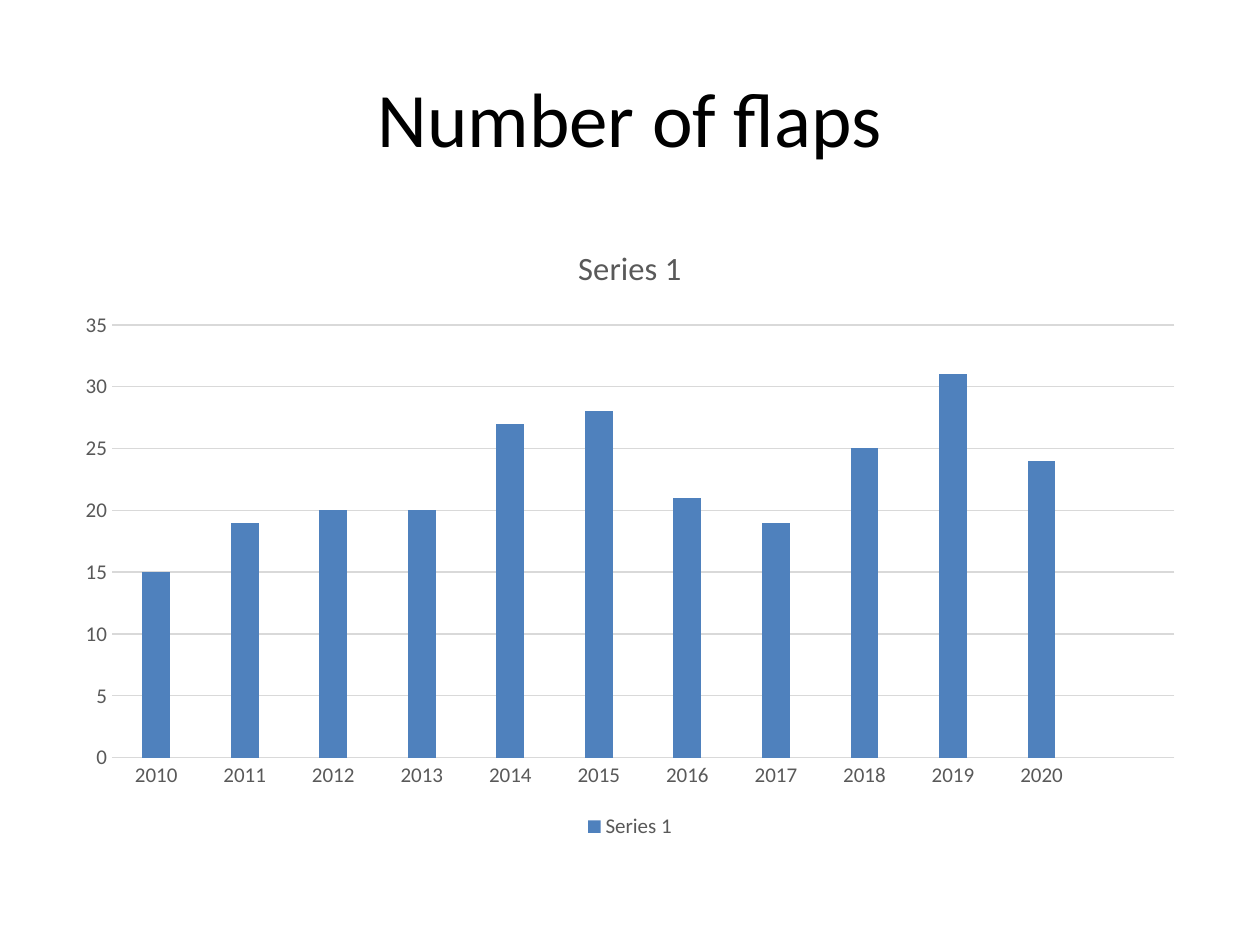
from pptx import Presentation
from pptx.chart.data import CategoryChartData
from pptx.dml.color import RGBColor
from pptx.enum.chart import XL_CHART_TYPE, XL_LEGEND_POSITION, XL_TICK_MARK
from pptx.enum.text import MSO_ANCHOR, PP_ALIGN
from pptx.util import Emu, Pt

PX = 9144  # EMU per px, at 100 px to the inch
FONT = "Calibri"
BLACK = RGBColor(0x00, 0x00, 0x00)
GREY = RGBColor(0x59, 0x59, 0x59)
RULE = RGBColor(0xD9, 0xD9, 0xD9)
BLUE = RGBColor(0x4F, 0x81, 0xBD)

SERIES = "Series 1"
YEARS = [str(year) for year in range(2010, 2021)] + [""]
FLAPS = [15, 19, 20, 20, 27, 28, 21, 19, 25, 31, 24, None]


def px(*lengths):
    return [Emu(length * PX) for length in lengths]


def style_font(font, size, color):
    font.name = FONT
    font.size = Pt(size)
    font.bold = False
    font.color.rgb = color


def style_rule(line):
    line.color.rgb = RULE
    line.width = Pt(0.75)


def place_title(slide, box):
    title = slide.shapes.title
    title.left, title.top, title.width, title.height = px(*box)
    frame = title.text_frame
    frame.text = "Number of flaps"
    frame.vertical_anchor = MSO_ANCHOR.MIDDLE
    heading = frame.paragraphs[0]
    heading.alignment = PP_ALIGN.CENTER
    style_font(heading.runs[0].font, 44, BLACK)


def style_axes(chart):
    years, counts = chart.category_axis, chart.value_axis
    for axis in (years, counts):
        axis.major_tick_mark = axis.minor_tick_mark = XL_TICK_MARK.NONE
        style_font(axis.tick_labels.font, 12, GREY)
    years.has_major_gridlines = False
    style_rule(years.format.line)
    counts.minimum_scale, counts.maximum_scale = 0, 35
    counts.major_unit = 5
    counts.format.line.fill.background()
    style_rule(counts.major_gridlines.format.line)


def add_flaps_chart(slide, box):
    flaps = CategoryChartData()
    flaps.categories = YEARS
    flaps.add_series(SERIES, FLAPS)
    chart = slide.shapes.add_chart(
        XL_CHART_TYPE.COLUMN_CLUSTERED, *px(*box), flaps).chart
    style_font(chart.font, 10, BLACK)

    chart.has_title = True
    heading = chart.chart_title.text_frame
    heading.text = SERIES
    style_font(heading.paragraphs[0].runs[0].font, 18.6, GREY)
    chart.chart_title.include_in_layout = False

    chart.has_legend = True
    chart.legend.position = XL_LEGEND_POSITION.BOTTOM
    chart.legend.include_in_layout = False
    style_font(chart.legend.font, 12, GREY)

    style_axes(chart)

    columns = chart.plots[0]
    columns.gap_width = 219
    columns.overlap = -27
    columns.vary_by_categories = False
    fill = columns.series[0].format.fill
    fill.solid()
    fill.fore_color.rgb = BLUE


def main():
    deck = Presentation()
    deck.slide_width, deck.slide_height = px(1000, 750)
    slide = deck.slides.add_slide(deck.slide_layouts[5])
    place_title(slide, (50, 30, 900, 125))
    add_flaps_chart(slide, (50, 175, 900, 495))
    deck.save("out.pptx")


if __name__ == "__main__":
    main()
